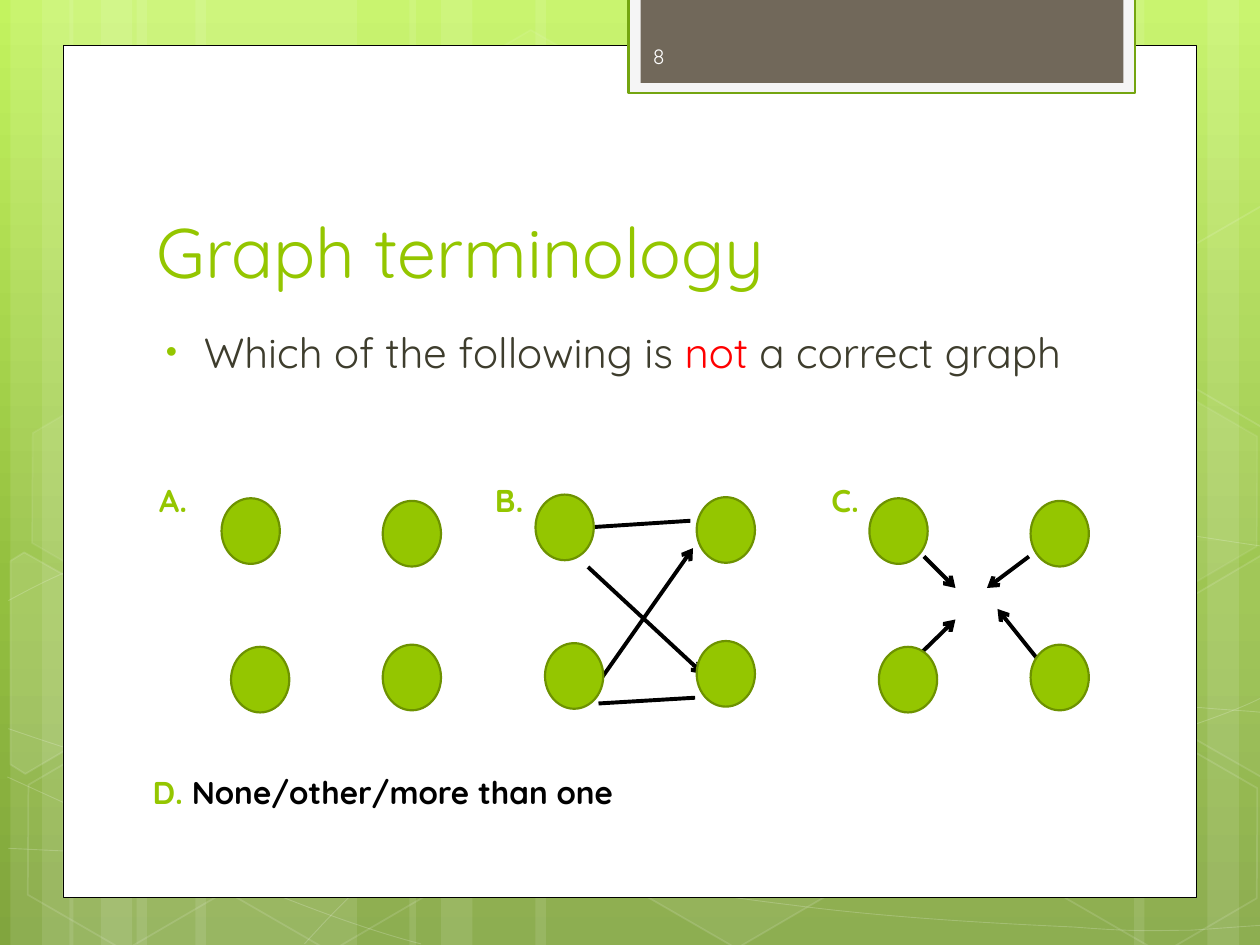
import copy
import math

import pptx
import pptx.dml.color
import pptx.enum.shapes
import pptx.enum.text
import pptx.oxml.ns
import pptx.util
from lxml import etree

COLUMNS, ROWS = 120, 90
CELL = pptx.util.Inches(10) / COLUMNS
FONT = "Quicksand"
GREEN, WHITE, BLACK, RED = "94C600", "FFFFFF", "000000", "FF0000"
SHAPE = pptx.enum.shapes.MSO_SHAPE
ALIGN = pptx.enum.text.PP_ALIGN
ANCHOR = pptx.enum.text.MSO_ANCHOR
TILT = 30

# Left edge and width of each light strip, in columns
STRIPS = [(13, 21), (1, 6), (4, 10), (18.6, 21), (6.6, 6), (9.6, 10),
          (88, 21), (115, 6), (108, 10), (51, 37), (39, 6), (42, 10)]

# Bezier chains: a start point, then three points for each segment
WAVES = [
    [(0.8, 80.8), (7.3, 81.1), (13.8, 81.5), (22.8, 81.4), (31.8, 81.2), (43, 81), (55, 79.8),
     (67, 78.6), (84, 76.3), (95, 74), (106, 71.8), (117.2, 68.2), (120.8, 66.1)],
    [(0.8, 57.2), (4.3, 55.3), (7.8, 53.5), (14.5, 51.7), (21.4, 49.9), (31.1, 47.3), (41.6, 46.4),
     (52.3, 45.6), (65.3, 45.5), (78.5, 46.4), (91.7, 47.4), (113.6, 51.1), (120.8, 52.1)],
    [(0.7, 74), (15.2, 80.6), (29.6, 87.2), (40.1, 89.9)],
    [(0.8, 69.4), (4.6, 70.7), (8.4, 72), (15.4, 73.9), (22.3, 75.7), (32.8, 78.7), (42.8, 80.8),
     (52.8, 82.8), (65.4, 85), (75.4, 86.2), (85.3, 87.5), (96, 88), (102.4, 88.3),
     (108.6, 88.8), (110.3, 88.6), (113.4, 88.6), (116.5, 88.4), (118.7, 88.2), (120.8, 88.1)],
    [(29, 89.9), (31.2, 87.5), (33.4, 85.1), (36.2, 82.9), (39.1, 80.8), (43.2, 78.4), (46.6, 76.7),
     (49.9, 75), (52, 74.3), (56.4, 73.1), (60.7, 71.9), (68.8, 70.2), (73, 69.4),
     (77.3, 68.5), (77.9, 68.5), (81.6, 68.3), (85.3, 67.9), (91.2, 67.6), (95.3, 67.4),
     (99.5, 67.3), (106.3, 67.4), (106.3, 67.4), (109, 67.4), (111.7, 67.4), (114.4, 67.4),
     (116.5, 67.6), (118.6, 67.7), (119.6, 67.8), (120.7, 67.9), (120.4, 67.8), (120.7, 67.9)],
]

# Left, top, fill opacity (0 for none) and outline opacity
HEXAGONS = [(40.1, 4.3, 4, 8), (59.6, 70.7, 6, 12), (1.3, 70.9, 0, 12),
            (1.7, 37.4, 7, 8), (20.9, 71, 0, 12), (90.4, 54.4, 10, 12),
            (100.1, 71.2, 0, 12), (100.1, 37.7, 7, 8)]

# Hexagons cut by the slide's edge: centre, corners and fill opacity
CUT_HEXAGONS = [
    ((4.32, 64.2), [(1, 53.4), (2.3, 52.6), (11.5, 57.8), (11.4, 68.4), (2.4, 73.7), (1, 72.8)], 10),
    ((118.2, 62.4), [(111.1, 58.2), (120.1, 52.9), (121.1, 53.5), (121.1, 73.6), (120.2, 74),
                     (111.1, 68.8)], 4),
    ((118.2, 28.9), [(111.1, 24.8), (120.1, 19.6), (121.2, 20.2), (121.1, 40.2), (120.2, 40.7),
                     (111.1, 35.4)], 0),
]

# Label, offset of the first node, edges (from, to, arrowhead) within the answer's box
GRAPHS = [
    ("A.", (8.1, 1.45), []),
    ("B.", (6, 1.1), [((11, 8), (22, 18.2), True), ((12, 19), (21, 6.2), True),
                      ((11.5, 4.2), (20.75, 3.6), False), ((12, 21), (21.2, 20.45), False)]),
    ("C.", (5.8, 1.45), [((10, 16.9), (14, 13), True), ((22, 17), (18, 12), True),
                         ((21, 7), (17, 10), True), ((11, 7), (14, 10), True)]),
]
NODES = [(0, 0), (0.9, 14.15), (15.35, 0.25), (15.35, 13.95)]


def cells(*lengths):
    return [round(length * CELL) for length in lengths]


def rgb(value):
    return pptx.dml.color.RGBColor.from_string(value)


def tag(name):
    return pptx.oxml.ns.qn(name)


def paint(fill, colour, holder, opacity=100):
    """Fill with a colour, or with nothing when opacity is 0; holder gives the XML parent."""
    if not opacity:
        fill.background()
        return
    fill.solid()
    fill.fore_color.rgb = rgb(colour)
    if opacity < 100:
        swatch = holder().find(tag("a:solidFill")).find(tag("a:srgbClr"))
        etree.SubElement(swatch, tag("a:alpha"), val=str(opacity * 1000))


def style(shape, fill, opacity=100, line=None, width=1, line_opacity=100):
    shape.shadow.inherit = False
    properties = shape.element.spPr
    paint(shape.fill, fill, lambda: properties, opacity)
    shape.line.width = pptx.util.Pt(width)
    paint(shape.line.fill, line, lambda: properties.find(tag("a:ln")),
          line_opacity if line else 0)


def add_preset(slide, kind, box, *look, **more):
    shape = slide.shapes.add_shape(kind, *cells(*box))
    style(shape, *look, **more)
    return shape


def add_outline(slide, points, closed):
    corners = [cells(*point) for point in points]
    builder = slide.shapes.build_freeform(*corners[0])
    builder.add_line_segments(corners[1:], close=closed)
    return builder.convert_to_shape()


def add_wave(slide, chain):
    wave = add_outline(slide, chain, False)
    steps = list(wave.element.iter(tag("a:lnTo")))
    for first, second, third in zip(steps[::3], steps[1::3], steps[2::3]):
        curve = etree.Element(tag("a:cubicBezTo"))
        first.addprevious(curve)
        for step in (first, second, third):
            curve.append(step[0])
            step.getparent().remove(step)
    style(wave, WHITE, 0, WHITE, 0.5, 20)


def turn_back(point, centre):
    """Undo the tilt of a point around the centre."""
    x, y = point[0] - centre[0], point[1] - centre[1]
    cos, sin = math.cos(math.radians(TILT)), math.sin(math.radians(TILT))
    return centre[0] + x * cos + y * sin, centre[1] - x * sin + y * cos


def write(holder, runs, size, bold=False, anchor=ANCHOR.TOP, align=ALIGN.LEFT):
    """Write (text, colour) runs into the first paragraph and return it."""
    frame = holder.text_frame
    frame.word_wrap = True
    frame.auto_size = pptx.enum.text.MSO_AUTO_SIZE.NONE
    frame.vertical_anchor = anchor
    paragraph = frame.paragraphs[0]
    paragraph.alignment = align
    for text, colour in runs:
        run = paragraph.add_run()
        run.text = text
        run.font.name, run.font.size, run.font.bold = FONT, pptx.util.Pt(size), bold
        run.font.color.rgb = rgb(colour)
    return paragraph


def add_label(slide, box, runs, size, **layout):
    write(slide.shapes.add_textbox(*cells(*box)), runs, size, **layout)


def place(placeholder, box):
    """Move a placeholder to its box, in front of the backdrop."""
    placeholder.left, placeholder.top, placeholder.width, placeholder.height = cells(*box)
    placeholder.element.getparent().append(placeholder.element)


def add_backdrop(slide):
    fill = slide.background.fill
    fill.gradient()
    fill.gradient_angle = 270
    stops = slide.element.find(".//" + tag("a:gsLst"))
    stops.insert(1, copy.deepcopy(stops[0]))
    shades = [(0, "C3F35F"), (0.62, "93BF3F"), (1, "81A53E")]
    for stop, (position, shade) in zip(fill.gradient_stops, shades):
        stop.position, stop.color.rgb = position, rgb(shade)
    for left, width in STRIPS:
        add_preset(slide, SHAPE.RECTANGLE, (left, 0, width, ROWS), WHITE, 10)
    for chain in WAVES:
        add_wave(slide, chain)
    for left, top, opacity, line_opacity in HEXAGONS:
        hexagon = add_preset(slide, SHAPE.HEXAGON, (left, top, 21, 18.2), WHITE, opacity,
                             line=WHITE, line_opacity=line_opacity)
        hexagon.rotation = TILT
        hexagon.adjustments[0], hexagon.adjustments[1] = 0.285, 1.155
    for centre, corners, opacity in CUT_HEXAGONS:
        cut = add_outline(slide, [turn_back(corner, centre) for corner in corners], True)
        cut.rotation = TILT
        style(cut, WHITE, opacity, WHITE, 1, 12)


def add_page(slide, number):
    add_preset(slide, SHAPE.RECTANGLE, (6, 4.3, 108, 81.2), WHITE, line=BLACK, width=0.5)
    add_preset(slide, SHAPE.RECTANGLE, (59.85, -0.2, 48.25, 9.1), "F5F5F5",
               line="74A510", width=1.25)
    add_preset(slide, SHAPE.RECTANGLE, (61, -0.2, 46, 8.1), "71685A")
    add_label(slide, (61, 2.95, 17.5, 4.8), [(number, "FEFEFE")], 12, anchor=ANCHOR.MIDDLE)


def add_question(slide, title, runs):
    heading, question = slide.placeholders
    place(heading, (13.7, 13.45, 92.2, 15.05))
    write(heading, [(title, GREEN)], 40, anchor=ANCHOR.BOTTOM)
    place(question, (13.65, 30.5, 95.3, 46.1))
    paragraph = write(question, runs, 24)
    paragraph.space_before = pptx.util.Pt(4.8)
    bullet = paragraph._p.get_or_add_pPr()
    bullet.set("marL", str(pptx.util.Inches(0.38)))
    bullet.set("indent", str(pptx.util.Inches(-0.3)))
    colour = etree.SubElement(bullet, tag("a:buClr"))
    etree.SubElement(colour, tag("a:srgbClr"), val=GREEN)
    etree.SubElement(bullet, tag("a:buSzPct"), val="76000")
    etree.SubElement(bullet, tag("a:buChar"), char="•")


def add_edge(slide, start, end, arrow):
    edge = slide.shapes.add_connector(pptx.enum.shapes.MSO_CONNECTOR.STRAIGHT,
                                      *cells(*start, *end))
    edge.line.width = pptx.util.Pt(2.25)
    edge.line.color.rgb = rgb(BLACK)
    properties = edge.element.spPr
    if arrow:
        etree.SubElement(properties.find(tag("a:ln")), tag("a:tailEnd"), type="arrow")
    etree.SubElement(properties, tag("a:effectLst"))


def add_graph(slide, left, top, label, first_node, edges):
    for start, end, arrow in edges:
        add_edge(slide, (left + start[0], top + start[1]), (left + end[0], top + end[1]), arrow)
    add_label(slide, (left, top, 7, 4), [(label, GREEN)], 18, bold=True,
              anchor=ANCHOR.BOTTOM, align=ALIGN.CENTER)
    for x, y in NODES:
        add_preset(slide, SHAPE.OVAL, (left + first_node[0] + x, top + first_node[1] + y, 5.55, 6.25),
                   GREEN, line="6D9200", width=1.25)


def main():
    deck = pptx.Presentation()
    deck.slide_width, deck.slide_height = cells(COLUMNS, ROWS)
    slide = deck.slides.add_slide(deck.slide_layouts[1])
    add_backdrop(slide)
    add_page(slide, "8")
    add_question(slide, "Graph terminology", [("Which of the following is ", "3E3D2D"),
                                              ("not", RED), (" a correct graph", "3E3D2D")])
    for i, graph in enumerate(GRAPHS):
        add_graph(slide, 13 + 32 * i, 46, *graph)
    add_label(slide, (13.35, 73, 53.6, 4.8),
              [("D. ", GREEN), ("None/other/more than one", BLACK)], 18, bold=True)
    deck.save("out.pptx")


if __name__ == "__main__":
    main()
